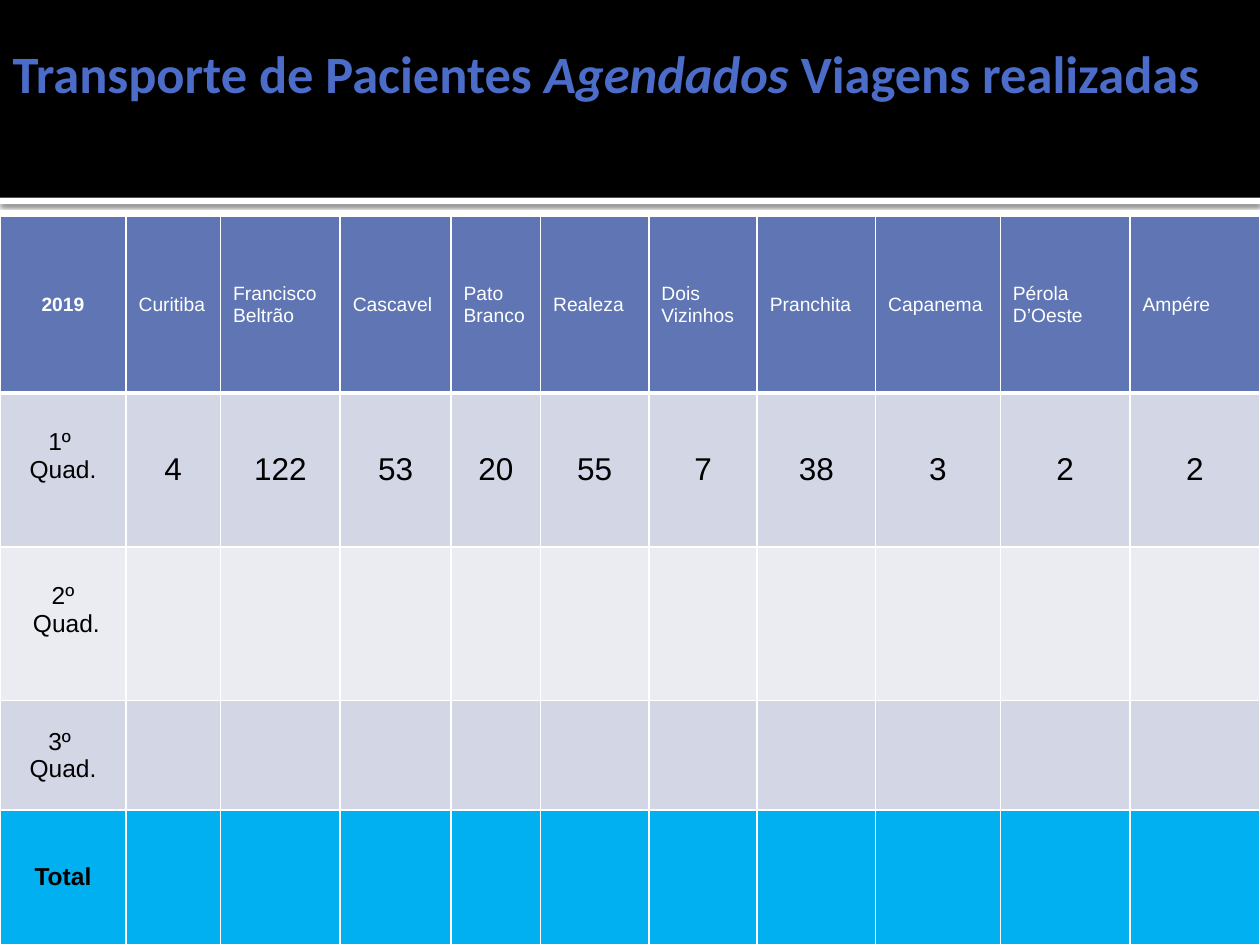
from pptx import Presentation
from pptx.dml.color import RGBColor
from pptx.enum.shapes import MSO_SHAPE
from pptx.enum.text import MSO_ANCHOR, MSO_AUTO_SIZE, PP_ALIGN
from pptx.oxml import parse_xml
from pptx.oxml.ns import nsdecls
from pptx.util import Inches, Pt

WHITE = RGBColor(0xFF, 0xFF, 0xFF)
BLACK = RGBColor(0x00, 0x00, 0x00)
TITLE_BLUE = RGBColor(0x4B, 0x6C, 0xC9)
HEADER_BLUE = RGBColor(0x60, 0x76, 0xB4)
BAND_DARK = RGBColor(0xD2, 0xD6, 0xE5)
BAND_LIGHT = RGBColor(0xEA, 0xEC, 0xF2)
TOTAL_CYAN = RGBColor(0x00, 0xB0, 0xF0)

COLUMN_WIDTHS = [1, 0.75, 0.95, 0.88, 0.71, 0.86, 0.86, 0.94, 0.99, 1.03, 1.03]
ROW_HEIGHTS = [1.4, 1.22, 1.22, 0.87, 1.07]
ROW_FILLS = [HEADER_BLUE, BAND_DARK, BAND_LIGHT, BAND_DARK, TOTAL_CYAN]
CITIES = ["Curitiba", "Francisco Beltrão", "Cascavel", "Pato\nBranco", "Realeza",
          "Dois\nVizinhos", "Pranchita", "Capanema", "Pérola D’Oeste", "Ampére"]
TRIPS = [4, 122, 53, 20, 55, 7, 38, 3, 2, 2]
# Label and bottom margin: the first two sit a little above the middle
PERIODS = [("1º \nQuad.", 0.27), ("2º\n Quad.", 0.27), ("3º \nQuad.", 0.05)]


class SlideBuilder:
    title_font = "Calibri"
    table_font = "Arial"

    def __init__(self, slide):
        self.slide = slide

    def band(self, top, height, color, shadow=False):
        band = self.slide.shapes.add_shape(
            MSO_SHAPE.RECTANGLE, 0, Inches(top), Inches(10), Inches(height))
        band.shadow.inherit = False
        band.fill.solid()
        band.fill.fore_color.rgb = color
        band.line.fill.background()
        if shadow:
            properties = band.element.spPr
            properties.remove(properties.find(".//{*}effectLst"))
            properties.append(parse_xml(
                f'<a:effectLst {nsdecls("a")}><a:outerShdw blurRad="{Pt(2.5)}" '
                f'dist="{Pt(0.8)}" dir="5400000" algn="ctr" rotWithShape="0">'
                f'<a:srgbClr val="{BLACK}"><a:alpha val="60000"/></a:srgbClr>'
                '</a:outerShdw></a:effectLst>'))

    def run(self, paragraph, text, font, size, color, bold=False, italic=False):
        run = paragraph.add_run()
        run.text = text
        run.font.name = font
        run.font.size = Pt(size)
        run.font.color.rgb = color
        run.font.bold = bold
        run.font.italic = italic

    def title(self, parts):
        title = self.slide.shapes.title
        title.left, title.top = 0, Inches(-0.19)
        title.width, title.height = Inches(10), Inches(1.53)
        frame = title.text_frame
        frame.word_wrap = True
        frame.auto_size = MSO_AUTO_SIZE.NONE
        frame.vertical_anchor = MSO_ANCHOR.MIDDLE
        frame.margin_left = Inches(0.1)
        frame.margin_right = frame.margin_top = frame.margin_bottom = Inches(0.05)
        heading = frame.paragraphs[0]
        heading.alignment = PP_ALIGN.LEFT
        for text, italic in parts:
            self.run(heading, text, self.title_font, 30, TITLE_BLUE, True, italic)
        # Bring the title in front of the bands
        title.element.getparent().append(title.element)

    def borders(self, cell, top, bottom):
        properties = cell._tc.get_or_add_tcPr()
        sides = {"lnL": 1, "lnR": 1, "lnT": top, "lnB": bottom}
        for position, (side, width) in enumerate(sides.items()):
            properties.insert(position, parse_xml(
                f'<a:{side} {nsdecls("a")} w="{Pt(width)}"><a:solidFill>'
                f'<a:srgbClr val="{WHITE}"/></a:solidFill></a:{side}>'))

    def table(self):
        table = self.slide.shapes.add_table(
            len(ROW_HEIGHTS), len(COLUMN_WIDTHS), 0, Inches(1.72),
            Inches(10), Inches(5.78)).table
        for column, width in zip(table.columns, COLUMN_WIDTHS):
            column.width = Inches(width)
        for index, (row, height) in enumerate(zip(table.rows, ROW_HEIGHTS)):
            row.height = Inches(height)
            for cell in row.cells:
                cell.fill.solid()
                cell.fill.fore_color.rgb = ROW_FILLS[index]
                self.borders(cell, 3 if index == 1 else 1, 3 if index == 0 else 1)
        return table

    def cell_text(self, cell, text, size, color=BLACK, bold=False,
                  align=PP_ALIGN.CENTER, bottom=0.05):
        cell.vertical_anchor = MSO_ANCHOR.MIDDLE
        cell.margin_bottom = Inches(bottom)
        frame = cell.text_frame
        for number, line in enumerate(text.split("\n")):
            paragraph = frame.add_paragraph() if number else frame.paragraphs[0]
            paragraph.alignment = align
            self.run(paragraph, line, self.table_font, size, color, bold)


def main():
    deck = Presentation()
    deck.slide_width, deck.slide_height = Inches(10), Inches(7.5)
    builder = SlideBuilder(deck.slides.add_slide(deck.slide_layouts[5]))

    # Heading bands and title
    builder.band(1.57, 0.05, WHITE, shadow=True)
    builder.band(0, 1.57, BLACK)
    builder.title([("Transporte de Pacientes", False), (" Agendados ", True),
                   ("Viagens realizadas", False)])

    # Trips by destination
    trips_table = builder.table()
    builder.cell_text(trips_table.cell(0, 0), "2019", 11, WHITE, bold=True)
    for column, (city, trips) in enumerate(zip(CITIES, TRIPS), start=1):
        builder.cell_text(trips_table.cell(0, column), city, 11, WHITE,
                          align=PP_ALIGN.LEFT)
        builder.cell_text(trips_table.cell(1, column), str(trips), 18)

    # Row labels
    for row, (period, bottom) in enumerate(PERIODS, start=1):
        builder.cell_text(trips_table.cell(row, 0), period, 14, bottom=bottom)
    builder.cell_text(trips_table.cell(4, 0), "Total", 14, bold=True)

    deck.save("out.pptx")


if __name__ == "__main__":
    main()
